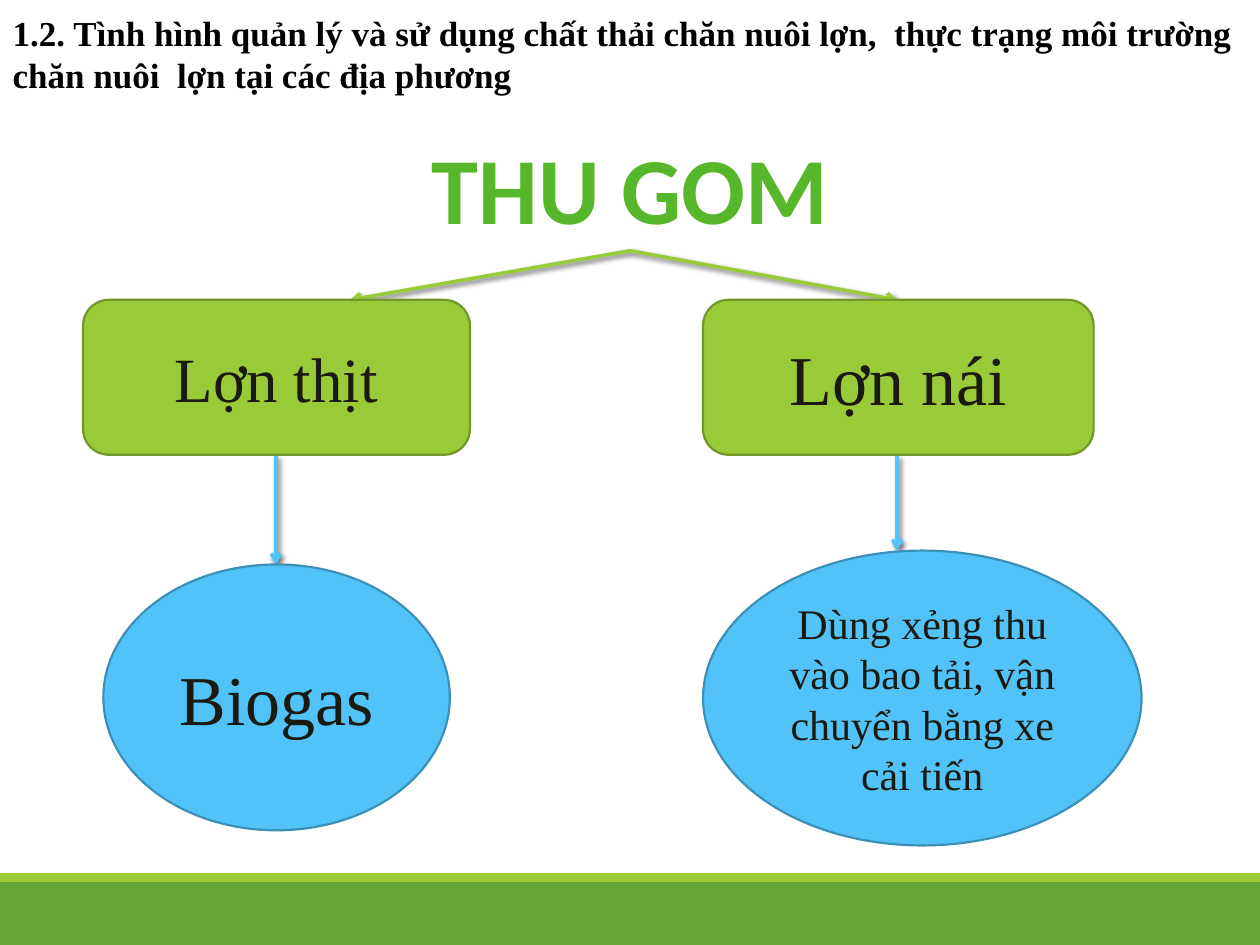
"""Build the slide on collecting pig manure, as a two-branch diagram."""
from lxml import etree
from pptx import Presentation
from pptx.dml.color import RGBColor
from pptx.enum.shapes import MSO_CONNECTOR, MSO_SHAPE
from pptx.enum.text import MSO_ANCHOR, PP_ALIGN
from pptx.oxml import parse_xml
from pptx.oxml.ns import qn
from pptx.util import Inches, Pt

RECTANGLE, ROUNDED, OVAL = MSO_SHAPE.RECTANGLE, MSO_SHAPE.ROUNDED_RECTANGLE, MSO_SHAPE.OVAL
STRAIGHT = MSO_CONNECTOR.STRAIGHT
TOP, MIDDLE = MSO_ANCHOR.TOP, MSO_ANCHOR.MIDDLE
LEFT, CENTER = PP_ALIGN.LEFT, PP_ALIGN.CENTER

COLORS = {
    "black": "000000", "ink": "1B1A10", "heading": "57B72A",
    "band": "63A537", "green": "99CB38", "green_edge": "719629",
    "blue": "51C3F9", "blue_edge": "3C90B8",
}
SERIF, SANS = "Times New Roman", "Calibri"
SHADOW = (
    '<a:effectLst xmlns:a="http://schemas.openxmlformats.org/drawingml/2006/main">'
    '<a:outerShdw blurRad="38100" dist="25400" dir="2700000" rotWithShape="0">'
    '<a:srgbClr val="000000"><a:alpha val="60000"/></a:srgbClr>'
    '</a:outerShdw></a:effectLst>'
)


def write(shape, text, size, font, color, align=CENTER, anchor=MIDDLE, bold=False):
    frame = shape.text_frame
    frame.word_wrap = True
    frame.vertical_anchor = anchor
    para = frame.paragraphs[0]
    para.text = text
    para.alignment = align
    para.font.size = Pt(size)
    para.font.name = font
    para.font.bold = bold
    para.font.color.rgb = RGBColor.from_string(COLORS[color])


def add_block(kind, bounds, fill, edge=None):
    shape = page.shapes.add_shape(kind, *map(Inches, bounds))
    shape.shadow.inherit = False
    shape.fill.solid()
    shape.fill.fore_color.rgb = RGBColor.from_string(COLORS[fill])
    if edge:
        shape.line.color.rgb = RGBColor.from_string(COLORS[edge])
        shape.line.width = Pt(1.25)
    else:
        shape.line.fill.background()
    return shape


deck = Presentation()
deck.slide_width, deck.slide_height = Inches(10), Inches(7.5)
page = deck.slides.add_slide(deck.slide_layouts[5])

add_block(RECTANGLE, (0, 7, 10, 0.5), "band")
add_block(RECTANGLE, (0, 6.93, 10, 0.07), "green")

title = page.shapes.title
title.left, title.top, title.width, title.height = map(Inches, (0, 0.04, 10, 0.77))
write(title, "1.2. Tình hình quản lý và sử dụng chất thải chăn nuôi lợn,  thực trạng môi trường "
      "chăn nuôi  lợn tại các địa phương", 20, SERIF, "black", LEFT, TOP, True)

heading = page.shapes.add_textbox(*map(Inches, (3.31, 0.98, 3.38, 1.01)))
write(heading, "THU GOM", 54, SANS, "heading", anchor=TOP, bold=True)
heading.text_frame.word_wrap = False

arrows = [
    (5, 1.99, 2.78, 2.38, "green"),
    (5, 1.99, 7.12, 2.38, "green"),
    (2.19, 3.62, 2.19, 4.48, "blue"),
    (7.12, 3.62, 7.12, 4.37, "blue"),
]
for *ends, color in arrows:
    arrow = page.shapes.add_connector(STRAIGHT, *map(Inches, ends))
    arrow.line.color.rgb = RGBColor.from_string(COLORS[color])
    arrow.line.width = Pt(2)
    etree.SubElement(arrow.line._get_or_add_ln(), qn("a:tailEnd"), type="arrow")
    arrow._element.spPr.append(parse_xml(SHADOW))

nodes = [
    (ROUNDED, (0.66, 2.38, 3.07, 1.23), "green", "Lợn thịt", 36),
    (ROUNDED, (5.58, 2.38, 3.1, 1.23), "green", "Lợn nái", 40),
    (OVAL, (0.82, 4.48, 2.75, 2.11), "blue", "Biogas", 40),
    (OVAL, (5.58, 4.37, 3.48, 2.34), "blue",
     "Dùng xẻng thu vào bao tải, vận chuyển bằng xe cải tiến", 24),
]
for kind, bounds, color, text, size in nodes:
    node = add_block(kind, bounds, color, f"{color}_edge")
    write(node, text, size, SERIF, "ink")

deck.save("out.pptx")
